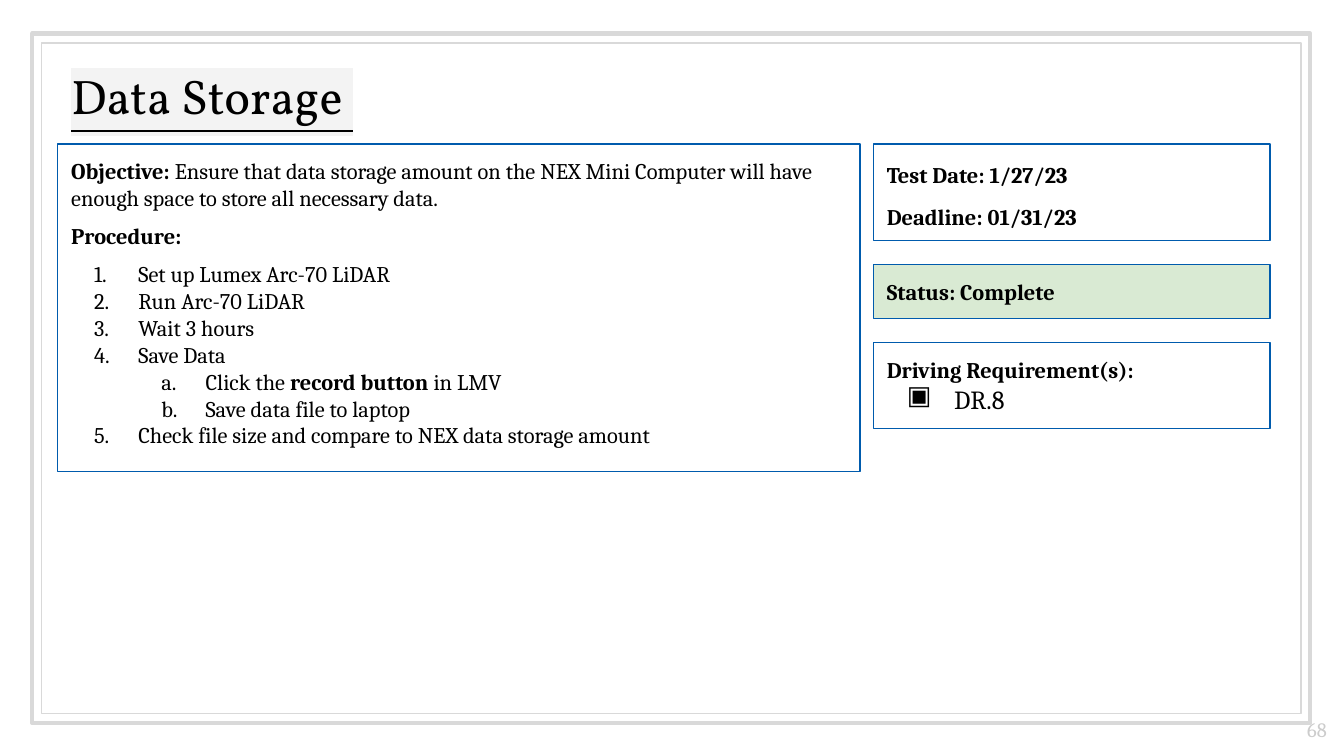
"""Build the Data Storage test slide with its procedure and status boxes."""
import pptx
import pptx.dml.color
import pptx.enum.shapes
import pptx.enum.text
import pptx.oxml
import pptx.oxml.ns
import pptx.util
from pptx.util import Inches

BLUE = "005BAD"
BLACK = "000000"


def rgb(value):
    return pptx.dml.color.RGBColor.from_string(value)


def write(frame, text, size=12, font="Cambria", color=BLACK, before=0, spacing=1.0,
          align="LEFT", level=0, indent=0, hanging=0, bullet=None):
    """Add a paragraph to the frame; parts between asterisks are bold."""
    first = frame.paragraphs[0]
    paragraph = frame.add_paragraph() if first.runs else first
    paragraph.level = level
    paragraph.alignment = getattr(pptx.enum.text.PP_ALIGN, align)
    paragraph.line_spacing = spacing
    paragraph.space_before = pptx.util.Pt(before)
    paragraph.space_after = pptx.util.Pt(0)
    properties = paragraph._p.get_or_add_pPr()
    properties.set("marL", str(Inches(indent)))
    properties.set("indent", str(Inches(-hanging)))
    namespace = pptx.oxml.ns.nsdecls("a")
    marks = [f'<a:buClr {namespace}><a:srgbClr val="{BLACK}"/></a:buClr>'] if bullet else []
    marks.append(f"<a:{bullet or 'buNone'} {namespace}/>")
    for mark in marks:
        properties.append(pptx.oxml.parse_xml(mark))
    for position, part in enumerate(text.split("*")):
        if part:
            run = paragraph.add_run()
            run.text = part
            run.font.size = pptx.util.Pt(size)
            run.font.name = font
            run.font.bold = position % 2 == 1
            run.font.color.rgb = rgb(color)
    return paragraph


deck = pptx.Presentation()
deck.slide_width = Inches(10)
deck.slide_height = Inches(10) * 9 // 16
slide = deck.slides.add_slide(deck.slide_layouts[1])
title, procedure = slide.placeholders

for left, top, width, height, weight in [(0.24, 0.25, 9.51, 5.13, 2.25),
                                         (0.31, 0.32, 9.37, 4.99, 0.75)]:
    border = slide.shapes.add_shape(pptx.enum.shapes.MSO_SHAPE.RECTANGLE, Inches(left),
                                    Inches(top), Inches(width), Inches(height))
    border.shadow.inherit = False
    border.fill.background()
    border.line.color.rgb = rgb("D9D9D9")
    border.line.width = pptx.util.Pt(weight)

frames = {}
for name, area, left, top, width, height, anchor in [
    ("title", title, 0.43, 0.29, 9.15, 0.83, "MIDDLE"),
    ("procedure", procedure, 0.43, 1.07, 5.97, 2.44, "TOP"),
    ("requirements", None, 6.5, 2.55, 2.95, 0.64, "TOP"),
    ("dates", None, 6.5, 1.07, 2.95, 0.72, "TOP"),
    ("status", None, 6.5, 1.97, 2.95, 0.4, "TOP"),
    ("number", None, 9.6, 5.35, 0.4, 0.27, "BOTTOM"),
]:
    place = Inches(left), Inches(top), Inches(width), Inches(height)
    if area is None:
        area = slide.shapes.add_textbox(*place)
    area.left, area.top, area.width, area.height = place
    if name not in ("title", "number"):
        area.line.color.rgb = rgb(BLUE)
        area.line.width = pptx.util.Pt(0.75)
    if name == "status":
        area.fill.solid()
        area.fill.fore_color.rgb = rgb("D9EAD3")
    frame = area.text_frame
    frame.word_wrap = True
    frame.auto_size = pptx.enum.text.MSO_AUTO_SIZE.NONE
    frame.vertical_anchor = getattr(pptx.enum.text.MSO_ANCHOR, anchor)
    frame.margin_left = frame.margin_right = Inches(0.1)
    frame.margin_top = frame.margin_bottom = Inches(0.1)
    frames[name] = frame

heading = write(frames["title"], "Data Storage ", size=26, font="Vollkorn").runs[0]
heading.font.underline = True
heading.font._element.find(pptx.oxml.ns.qn("a:solidFill")).addnext(pptx.oxml.parse_xml(
    f'<a:highlight {pptx.oxml.ns.nsdecls("a")}><a:srgbClr val="F3F3F3"/></a:highlight>'))

write(frames["procedure"], "*Objective:* Ensure that data storage amount on the NEX Mini Computer "
      "will have enough space to store all necessary data.")
write(frames["procedure"], "*Procedure:*", before=6)
for level, before, step in [
    (0, 6, "Set up Lumex Arc-70 LiDAR"),
    (0, 0, "Run Arc-70 LiDAR"),
    (0, 0, "Wait 3 hours"),
    (0, 0, "Save Data"),
    (1, 0, "Click the *record button* in LMV"),
    (1, 0, "Save data file to laptop"),
    (0, 0, "Check file size and compare to NEX data storage amount"),
]:
    numbering = ("arabicPeriod", "alphaLcPeriod")[level]
    write(frames["procedure"], step, before=before, level=level, indent=0.5 * (level + 1),
          hanging=0.33, bullet=f'buAutoNum type="{numbering}"')

write(frames["requirements"], "*Driving Requirement(s):*")
write(frames["requirements"], "DR.8", size=14, indent=0.5, hanging=0.35, bullet='buChar char="▣"')
write(frames["dates"], "*Test Date: 1/27/23*", spacing=1.15)
write(frames["dates"], "*Deadline: 01/31/23*", spacing=1.15, before=6)
write(frames["status"], "*Status: Complete*")
write(frames["number"], "68", size=11, color="CCCCCC", align="CENTER")

deck.save("out.pptx")
